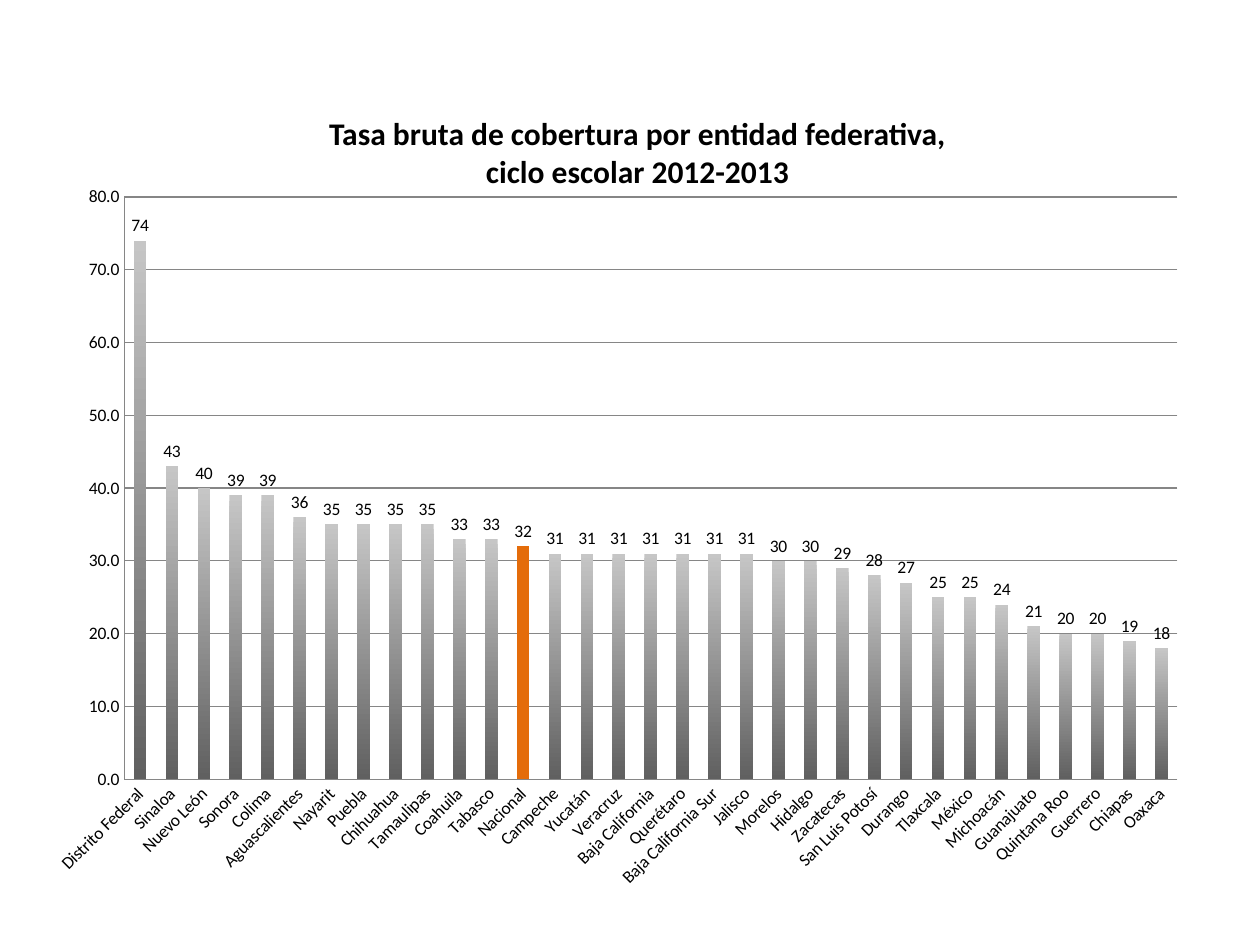
from dataclasses import dataclass

from pptx import Presentation
from pptx.chart.data import CategoryChartData
from pptx.dml.color import RGBColor
from pptx.enum.chart import XL_CHART_TYPE, XL_LABEL_POSITION, XL_TICK_MARK
from pptx.enum.text import MSO_ANCHOR, MSO_AUTO_SIZE, PP_ALIGN
from pptx.util import Inches, Pt


@dataclass(frozen=True)
class Theme:
    """Colours, font and type sizes of the slide."""
    font: str = "Calibri"
    title_size: int = 18
    chart_size: int = 10
    text: RGBColor = RGBColor(0x00, 0x00, 0x00)
    grid: RGBColor = RGBColor(0x86, 0x86, 0x86)
    bar_top: RGBColor = RGBColor(0xC6, 0xC6, 0xC6)
    bar_bottom: RGBColor = RGBColor(0x60, 0x60, 0x60)
    highlight: RGBColor = RGBColor(0xE4, 0x6C, 0x0A)


COVERAGE = {
    "Distrito Federal": 74, "Sinaloa": 43, "Nuevo León": 40, "Sonora": 39,
    "Colima": 39, "Aguascalientes": 36, "Nayarit": 35, "Puebla": 35,
    "Chihuahua": 35, "Tamaulipas": 35, "Coahuila": 33, "Tabasco": 33,
    "Nacional": 32, "Campeche": 31, "Yucatán": 31, "Veracruz": 31,
    "Baja California": 31, "Querétaro": 31, "Baja California Sur": 31,
    "Jalisco": 31, "Morelos": 30, "Hidalgo": 30, "Zacatecas": 29,
    "San Luis Potosí": 28, "Durango": 27, "Tlaxcala": 25, "México": 25,
    "Michoacán": 24, "Guanajuato": 21, "Quintana Roo": 20, "Guerrero": 20,
    "Chiapas": 19, "Oaxaca": 18,
}


class SlideBuilder:
    """Adds styled elements to the current slide."""

    def __init__(self, slide, theme):
        self.slide = slide
        self.theme = theme

    def style_font(self, font, size, bold=False):
        """Apply the theme's face and text colour."""
        font.name = self.theme.font
        font.size = Pt(size)
        font.bold = bold
        font.color.rgb = self.theme.text

    def title(self, text, left, top, width, height):
        """Place and format the title placeholder."""
        title = self.slide.shapes.title
        title.left, title.top = Inches(left), Inches(top)
        title.width, title.height = Inches(width), Inches(height)
        frame = title.text_frame
        frame.text = text
        frame.word_wrap = True
        frame.auto_size = MSO_AUTO_SIZE.NONE
        frame.vertical_anchor = MSO_ANCHOR.MIDDLE
        for line in frame.paragraphs:
            line.alignment = PP_ALIGN.CENTER
            self.style_font(line.font, self.theme.title_size, bold=True)

    def column_chart(self, values, highlighted, left, top, width, height):
        """Add a column chart with one highlighted category."""
        data = CategoryChartData()
        data.categories = list(values)
        data.add_series("Series 1", list(values.values()))
        chart = self.slide.shapes.add_chart(
            XL_CHART_TYPE.COLUMN_CLUSTERED, Inches(left), Inches(top),
            Inches(width), Inches(height), data).chart
        chart.has_legend = False
        chart.has_title = False
        self.style_font(chart.font, self.theme.chart_size)
        self.format_axes(chart)
        self.format_bars(chart.plots[0], list(values).index(highlighted))

    def format_axes(self, chart):
        """Set the scale, gridlines and slanted category names."""
        states, rates = chart.category_axis, chart.value_axis
        for axis in (states, rates):
            axis.major_tick_mark = XL_TICK_MARK.NONE
            axis.minor_tick_mark = XL_TICK_MARK.NONE
            self.style_font(axis.tick_labels.font, self.theme.chart_size)
            axis.format.line.color.rgb = self.theme.grid
        rates.minimum_scale, rates.maximum_scale, rates.major_unit = 0, 80, 10
        rates.tick_labels.number_format = "0.0"
        rates.tick_labels.number_format_is_linked = False
        rates.has_major_gridlines = True
        rates.major_gridlines.format.line.color.rgb = self.theme.grid
        for body in chart.element.xpath(".//c:catAx/c:txPr/a:bodyPr"):
            body.set("rot", "-2700000")
            body.set("vert", "horz")

    def format_bars(self, plot, highlighted_index):
        """Shade the bars, mark one of them and show the values."""
        plot.gap_width = 150
        plot.vary_by_categories = False
        rates = plot.series[0]
        rates.invert_if_negative = False
        fill = rates.format.fill
        fill.gradient()
        fill.gradient_angle = 270
        shades = (self.theme.bar_top, self.theme.bar_bottom)
        for stop, shade in zip(fill.gradient_stops, shades):
            stop.color.rgb = shade
        highlight = rates.points[highlighted_index].format.fill
        highlight.solid()
        highlight.fore_color.rgb = self.theme.highlight
        labels = rates.data_labels
        labels.show_value = True
        labels.number_format = "#,##0"
        labels.number_format_is_linked = False
        labels.position = XL_LABEL_POSITION.OUTSIDE_END
        self.style_font(labels.font, self.theme.chart_size)


def main():
    """Build and save the coverage slide."""
    deck = Presentation()
    deck.slide_width, deck.slide_height = Inches(10), Inches(7.5)
    title_only = deck.slide_layouts[5]
    builder = SlideBuilder(deck.slides.add_slide(title_only), Theme())
    builder.column_chart(COVERAGE, "Nacional", 0.27, 1.37, 9.26, 5.79)
    builder.title("Tasa bruta de cobertura por entidad federativa,\n"
                  "ciclo escolar 2012-2013", 1.4, 0.89, 7.32, 0.63)
    deck.save("out.pptx")


if __name__ == "__main__":
    main()
